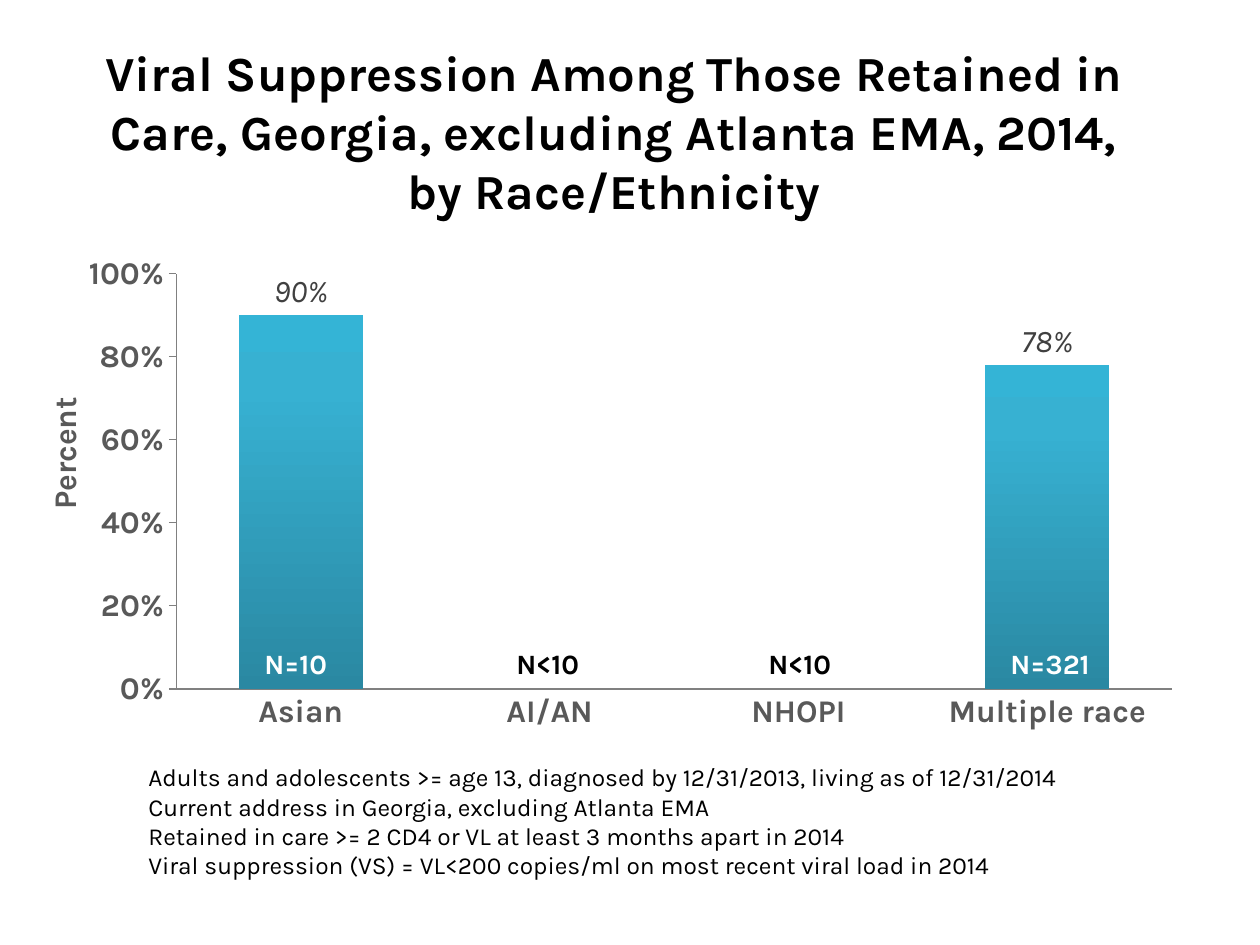
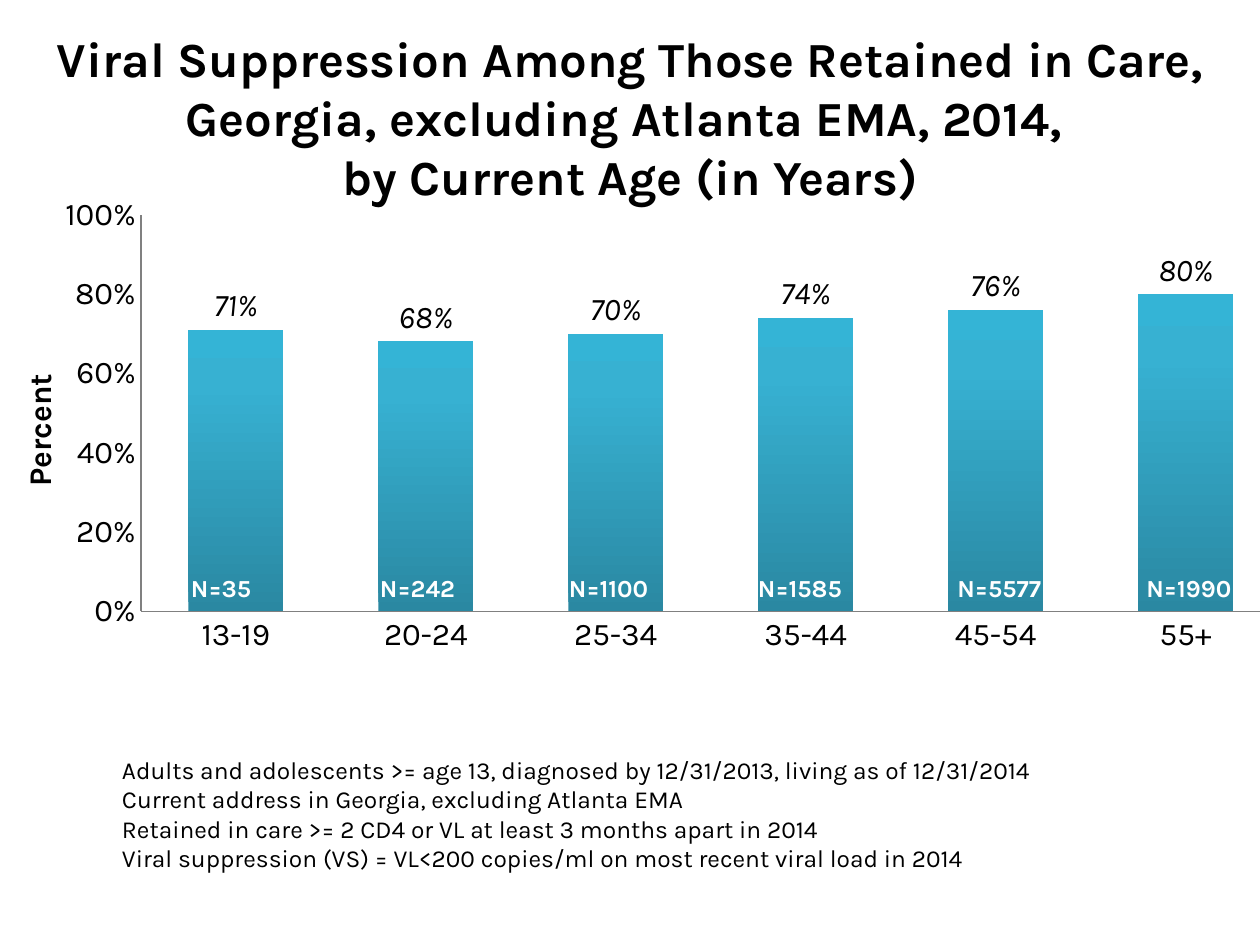
from lxml import etree
from pptx import Presentation
from pptx.chart.data import CategoryChartData
from pptx.dml.color import RGBColor
from pptx.enum.chart import XL_CHART_TYPE, XL_LABEL_POSITION, XL_TICK_MARK
from pptx.enum.shapes import MSO_SHAPE
from pptx.enum.text import MSO_ANCHOR, MSO_AUTO_SIZE, PP_ALIGN
from pptx.oxml.ns import qn
from pptx.util import Cm, Pt

COLUMNS = XL_CHART_TYPE.COLUMN_CLUSTERED
OUTSIDE_END = XL_LABEL_POSITION.OUTSIDE_END
TICK_NONE, TICK_OUT = XL_TICK_MARK.NONE, XL_TICK_MARK.OUTSIDE
RECTANGLE = MSO_SHAPE.RECTANGLE
TOP, MIDDLE = MSO_ANCHOR.TOP, MSO_ANCHOR.MIDDLE
NO_AUTOFIT = MSO_AUTO_SIZE.NONE
LEFT, CENTER = PP_ALIGN.LEFT, PP_ALIGN.CENTER

FONT = "Karla"
BLACK, WHITE = "000000", "FFFFFF"
DARK_GREY, TEXT_GREY, AXIS_GREY = "404040", "595959", "808080"
BAR_GRADIENT = [(0, "2A88A2"), (80, "37B1D2"), (100, "34B4D6")]
TITLE_ONLY_LAYOUT = 5

FOOTNOTES = [
    "Adults and adolescents >= age 13, diagnosed by 12/31/2013, living as of 12/31/2014",
    "Current address in Georgia, excluding Atlanta EMA",
    "Retained in care >= 2 CD4 or VL at least 3 months apart in 2014",
    "Viral suppression (VS) = VL<200 copies/ml on most recent viral load in 2014",
]


def rgb(hex_color):
    return RGBColor.from_string(hex_color)


def set_font(font, size, color=BLACK, bold=False, italic=False):
    font.name = FONT
    font.size = Pt(size)
    font.bold = bold
    font.italic = italic
    font.color.rgb = rgb(color)


def write_text(frame, paragraphs, align=LEFT, anchor=TOP, **font_format):
    """Fill a text frame; a newline inside a paragraph is a line break."""
    frame.word_wrap = True
    frame.auto_size = NO_AUTOFIT
    frame.vertical_anchor = anchor
    for index, text in enumerate(paragraphs):
        para = frame.paragraphs[0] if index == 0 else frame.add_paragraph()
        para.alignment = align
        for line_index, line in enumerate(text.split("\n")):
            if line_index:
                para.add_line_break()
            span = para.add_run()
            span.text = line
            set_font(span.font, **font_format)


def place(shape, left, top, width, height):
    shape.left, shape.top = Cm(left), Cm(top)
    shape.width, shape.height = Cm(width), Cm(height)


def add_title(page, text, *position):
    title = page.shapes.title
    place(title, *position)
    write_text(title.text_frame, [text], align=CENTER, anchor=MIDDLE,
               size=28, bold=True)


def add_footnotes(page, left, top):
    box = page.shapes.add_shape(RECTANGLE, Cm(left), Cm(top), Cm(22), Cm(2.64))
    box.shadow.inherit = False
    box.fill.solid()
    box.fill.fore_color.rgb = rgb(WHITE)
    box.line.fill.background()
    write_text(box.text_frame, FOOTNOTES, size=14)


def add_count(page, text, left, top, size, color=WHITE):
    box = page.shapes.add_textbox(Cm(left), Cm(top), Cm(2.6), Cm(0.9))
    write_text(box.text_frame, [text], size=size, color=color, bold=True)


def add_element(parent, tag, **attributes):
    return etree.SubElement(parent, qn(tag), attributes)


def set_layout(parent, index, inner=False, **fractions):
    """Place a chart part by fractions of the chart's size."""
    layout = parent.find(qn("c:layout"))
    if layout is None:
        layout = etree.Element(qn("c:layout"))
        parent.insert(index, layout)
    manual = add_element(layout, "c:manualLayout")
    if inner:
        add_element(manual, "c:layoutTarget", val="inner")
    for key in ("x", "y"):
        add_element(manual, f"c:{key}Mode", val="edge")
    for key, fraction in fractions.items():
        add_element(manual, f"c:{key}", val=str(fraction))


def fill_with_gradient(series):
    series.format.fill.gradient()
    gradient = series.format.fill
    gradient.gradient_angle = 90
    stops = next(series._element.iter(qn("a:gsLst")))
    for stop in list(stops):
        stops.remove(stop)
    for percent, color in BAR_GRADIENT:
        stop = add_element(stops, "a:gs", pos=str(percent * 1000))
        add_element(stop, "a:srgbClr", val=color)


def format_axis(axis, tick, line_width, **font_format):
    axis.has_major_gridlines = False
    axis.major_tick_mark = tick
    axis.minor_tick_mark = TICK_NONE
    axis.format.line.color.rgb = rgb(AXIS_GREY)
    axis.format.line.width = Pt(line_width)
    set_font(axis.tick_labels.font, 18, **font_format)


def add_percent_chart(page, position, categories, values, plot, title_place,
                      tick=TICK_NONE, category_line=0.75, color=BLACK,
                      label_color=BLACK, bold=False):
    data = CategoryChartData(number_format="0%")
    data.categories = categories
    data.add_series("Series 1", values)
    lengths = [Cm(length) for length in position]
    chart = page.shapes.add_chart(COLUMNS, *lengths, data).chart
    chart.has_legend = False
    chart.has_title = False
    set_font(chart.font, 18)

    format_axis(chart.category_axis, TICK_NONE, category_line,
                color=color, bold=bold)
    axis = chart.value_axis
    format_axis(axis, tick, 0.75, color=color, bold=bold)
    axis.minimum_scale, axis.maximum_scale, axis.major_unit = 0, 1, 0.2
    axis.tick_labels.number_format = "0%"
    axis.tick_labels.number_format_is_linked = False
    write_axis_title(axis.axis_title, "Percent", color, title_place)

    bars = chart.plots[0]
    bars.gap_width, bars.overlap = 100, -24
    bars.vary_by_categories = False
    fill_with_gradient(bars.series[0])
    bars.has_data_labels = True
    labels = bars.data_labels
    labels.show_value = True
    labels.position = OUTSIDE_END
    labels.number_format = "0%"
    labels.number_format_is_linked = False
    set_font(labels.font, 18, color=label_color, italic=True)
    set_layout(next(chart.element.iter(qn("c:plotArea"))), 0, inner=True, **plot)


def write_axis_title(title, text, color, title_place):
    span = title.text_frame.paragraphs[0].add_run()
    span.text = text
    set_font(span.font, 18, color=color, bold=True)
    next(title.element.iter(qn("a:bodyPr"))).set("rot", "-5400000")
    set_layout(title.element, 1, **title_place)


def build_race_page(page):
    add_title(page, "Viral Suppression Among Those Retained in Care, Georgia, "
              "excluding Atlanta EMA, 2014, by Race/Ethnicity",
              1.47, 1.27, 21.8, 2.74)
    add_percent_chart(
        page, (0, 4.14, 25.4, 12.5),
        ["Asian", "AI/AN", "NHOPI", "Multiple race"], [0.9, None, None, 0.78],
        plot=dict(x=0.14, y=0.11, w=0.79, h=0.67),
        title_place=dict(x=0.03, y=0.3),
        tick=TICK_OUT, category_line=1, color=TEXT_GREY,
        label_color=DARK_GREY, bold=True)
    counts = [("N=10", 5.08, WHITE), ("N<10", 10.16, BLACK),
              ("N<10", 15.24, BLACK), ("N=321", 20.12, WHITE)]
    for text, left, color in counts:
        add_count(page, text, left, 12.9, size=16, color=color)
    add_footnotes(page, 2.74, 15.24)


def build_age_page(page):
    add_title(page, "Viral Suppression Among Those Retained in Care, Georgia, "
              "excluding Atlanta EMA, 2014, \nby Current Age (in Years)",
              0, 0.76, 25.4, 3.18)
    add_percent_chart(
        page, (0, 3.81, 25.83, 12.9),
        ["13-19", "20-24", "25-34", "35-44", "45-54", "55+"],
        [0.71, 0.68, 0.7, 0.74, 0.76, 0.8],
        plot=dict(x=0.11, y=0.04, w=0.89, h=0.62),
        title_place=dict(x=0.01, y=0.28))
    counts = [("N=35", 3.6), ("N=242", 7.41), ("N=1100", 11.22),
              ("N=1585", 15.03), ("N=5577", 19.05), ("N=1990", 22.86)]
    for text, left in counts:
        add_count(page, text, left, 11.43, size=14)
    add_footnotes(page, 2.21, 15.09)


def main():
    deck = Presentation()
    deck.slide_width, deck.slide_height = Cm(25.4), Cm(19.05)
    for build in (build_race_page, build_age_page):
        build(deck.slides.add_slide(deck.slide_layouts[TITLE_ONLY_LAYOUT]))
    deck.save("out.pptx")


if __name__ == "__main__":
    main()
